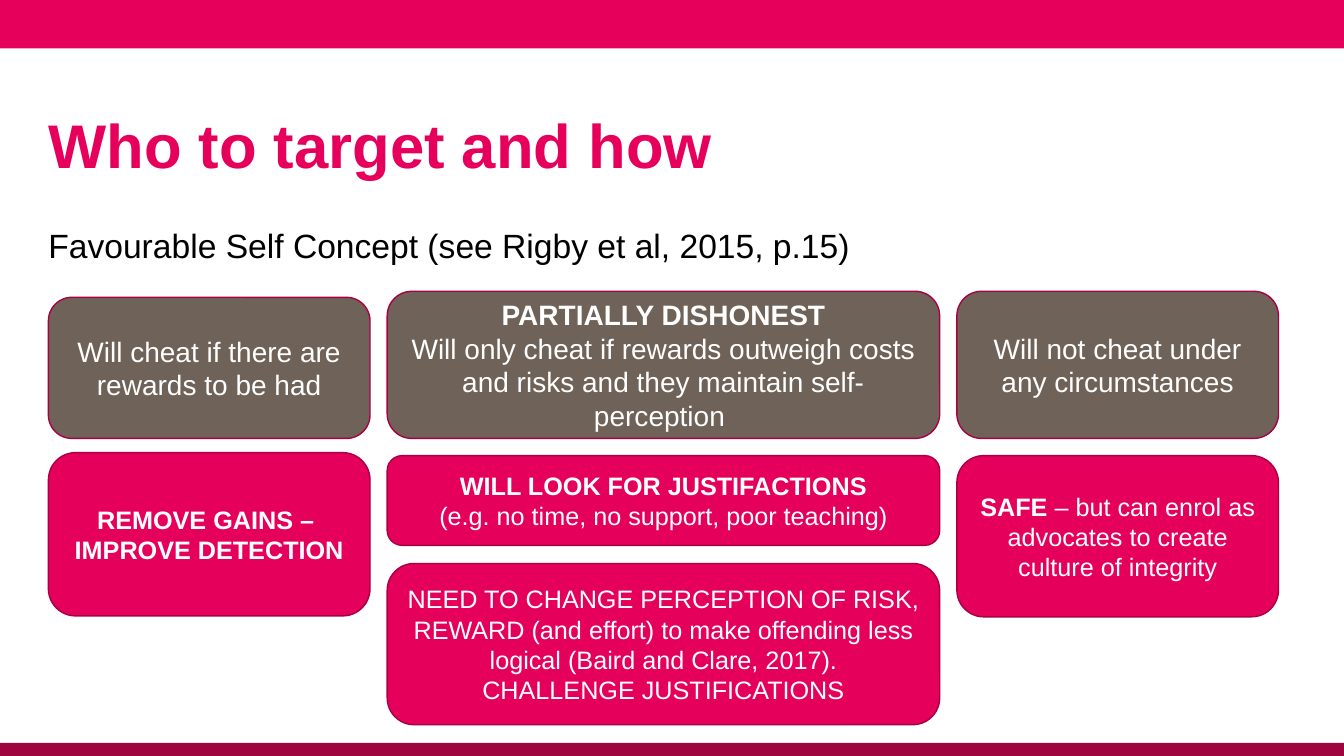
from pptx import Presentation
from pptx.dml.color import RGBColor
from pptx.enum.shapes import MSO_SHAPE as Shape
from pptx.enum.text import MSO_ANCHOR as Anchor, PP_ALIGN as Align
from pptx.util import Inches, Pt

PINK, CARD_PINK, DARK_PINK, OUTLINE = "E6005B", "E5005B", "9E043D", "A90043"
BROWN, WHITE, BLACK = "6F6258", "FFFFFF", "000000"

LEFT_MARGIN, GUTTER = 0.48, 0.17
SIDE_WIDTH, MIDDLE_WIDTH = 3.19, 5.48

COLUMNS = [
    (SIDE_WIDTH, [
        (2.95, 1.4, BROWN, 20, [[("Will cheat if there are rewards to be had", False)]]),
        (4.49, 1.62, CARD_PINK, 18, [[("REMOVE GAINS – ", True)],
                                     [("IMPROVE DETECTION", True)]]),
    ]),
    (MIDDLE_WIDTH, [
        (2.89, 1.46, BROWN, 20, [
            [("PARTIALLY DISHONEST", True)],
            [("Will only cheat if rewards outweigh costs and risks and they "
              "maintain self-perception ", False)]]),
        (4.52, 0.89, CARD_PINK, 18, [
            [("WILL LOOK FOR JUSTIFACTIONS", True)],
            [("(e.g. no time, no support, poor teaching)", False)]]),
        (5.59, 1.6, CARD_PINK, 18, [
            [("NEED TO CHANGE PERCEPTION OF RISK, REWARD (and effort) to make "
              "offending less logical (Baird and Clare, 2017).", False)],
            [("CHALLENGE JUSTIFICATIONS", False)]]),
    ]),
    (SIDE_WIDTH, [
        (2.89, 1.46, BROWN, 20, [[("Will not cheat under any circumstances", False)]]),
        (4.52, 1.6, CARD_PINK, 18, [
            [("SAFE", True),
             (" – but can enrol as advocates to create culture of integrity", False)]]),
    ]),
]


def color(value):
    return RGBColor.from_string(value)


def style_font(font, size, text_color):
    font.name = "Arial"
    font.size = Pt(size)
    font.color.rgb = color(text_color)


def add_filled_shape(slide, kind, left, top, width, height, fill):
    shape = slide.shapes.add_shape(
        kind, Inches(left), Inches(top), Inches(width), Inches(height))
    shape.shadow.inherit = False
    shape.fill.solid()
    shape.fill.fore_color.rgb = color(fill)
    return shape


def add_band(slide, top, height, fill):
    band = add_filled_shape(slide, Shape.RECTANGLE, 0, top, 13.33, height, fill)
    band.line.fill.background()


def add_heading(slide, top, height, text, size, text_color, bold, anchor):
    box = slide.shapes.add_textbox(
        Inches(LEFT_MARGIN), Inches(top), Inches(12.36), Inches(height))
    frame = box.text_frame
    frame.word_wrap = True
    frame.margin_left = 0
    frame.vertical_anchor = anchor
    paragraph = frame.paragraphs[0]
    paragraph.text = text
    style_font(paragraph.font, size, text_color)
    paragraph.font.bold = bold


def add_card(slide, left, top, width, height, fill, size, paragraphs):
    card = add_filled_shape(
        slide, Shape.ROUNDED_RECTANGLE, left, top, width, height, fill)
    card.line.color.rgb = color(OUTLINE)
    card.line.width = Pt(1)
    frame = card.text_frame
    frame.word_wrap = True
    frame.vertical_anchor = Anchor.MIDDLE
    for index, runs in enumerate(paragraphs):
        paragraph = frame.add_paragraph() if index else frame.paragraphs[0]
        paragraph.alignment = Align.CENTER
        style_font(paragraph.font, size, WHITE)
        for text, bold in runs:
            run = paragraph.add_run()
            run.text = text
            run.font.bold = bold


def add_columns(slide, left):
    for width, cards in COLUMNS:
        for top, height, fill, size, paragraphs in cards:
            add_card(slide, left, top, width, height, fill, size, paragraphs)
        left += width + GUTTER


def main():
    presentation = Presentation()
    presentation.slide_width = Inches(13.33)
    presentation.slide_height = Inches(7.5)
    slide = presentation.slides.add_slide(presentation.slide_layouts[6])
    add_band(slide, 0, 0.48, PINK)
    add_band(slide, 7.37, 0.13, DARK_PINK)
    add_heading(slide, 0.88, 1.1, "Who to target and how", 44, PINK, True, Anchor.MIDDLE)
    add_heading(slide, 2.18, 0.6, "Favourable Self Concept (see Rigby et al, 2015, p.15)",
                24, BLACK, False, Anchor.TOP)
    add_columns(slide, LEFT_MARGIN)
    presentation.save("out.pptx")


if __name__ == "__main__":
    main()
